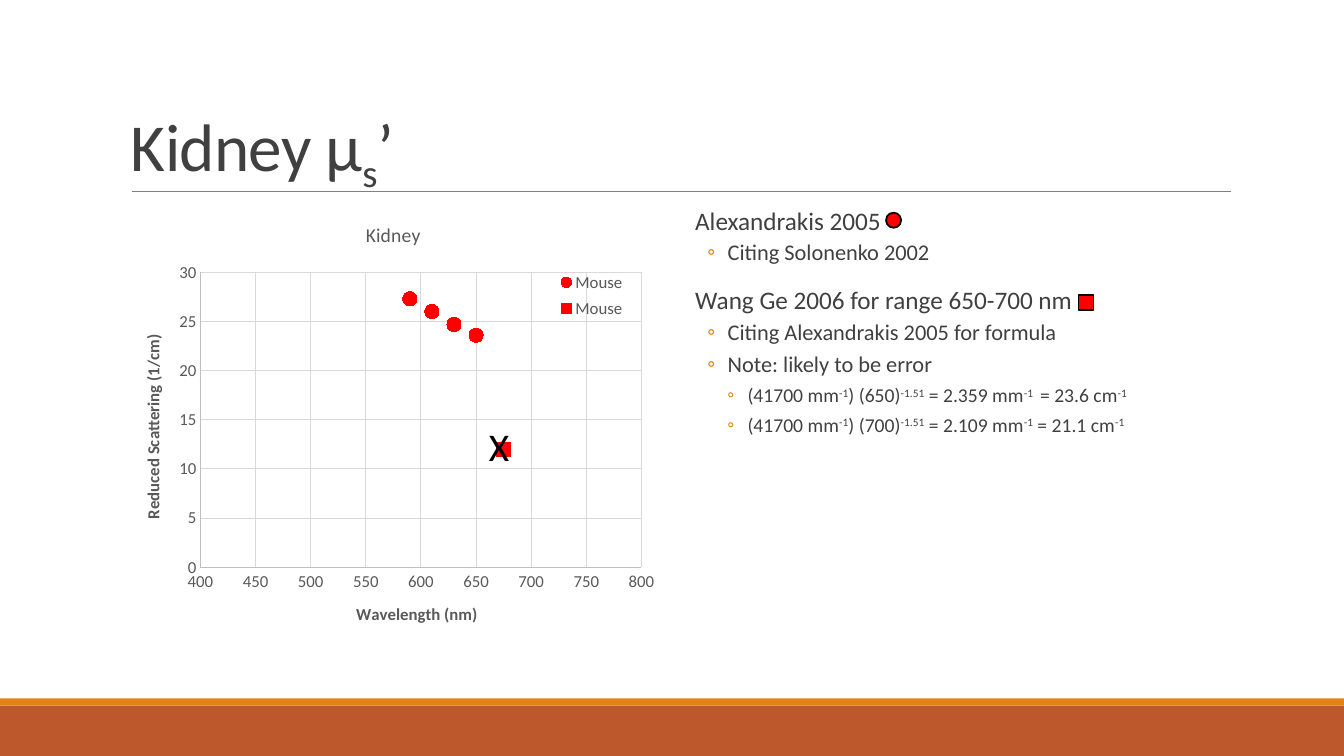
from lxml.etree import SubElement
from pptx import Presentation
from pptx.chart.data import XyChartData
from pptx.dml.color import RGBColor
from pptx.enum.chart import (XL_CHART_TYPE as ChartType, XL_LEGEND_POSITION as LegendPosition,
                             XL_MARKER_STYLE as Marker, XL_TICK_MARK as TickMark)
from pptx.enum.shapes import MSO_CONNECTOR as Connector, MSO_SHAPE as Shape
from pptx.enum.text import MSO_ANCHOR as Anchor
from pptx.oxml import parse_xml
from pptx.oxml.ns import nsdecls, qn
from pptx.util import Cm, Pt

SLIDE_W, SLIDE_H = 33.87, 19.05
LEFT, BODY_TOP, BODY_W, BODY_H = 3.05, 5.13, 13.72, 11.18
# Per outline level: size, left margin (cm), hanging indent (cm), space before, space after
LEVELS = [(18, 0.25, 0, 12, 2), (16, 1.07, 0.51, 2, 4), (14, 1.57, 0.51, 2, 4)]
NOTES = [
    (0, "Alexandrakis 2005"),
    (1, "Citing Solonenko 2002"),
    (0, "Wang Ge 2006 for range 650-700 nm"),
    (1, "Citing Alexandrakis 2005 for formula"),
    (1, "Note: likely to be error"),
    (2, "(41700 mm^-1^) (650)^-1.51^ = 2.359 mm^-1 ^ = 23.6 cm^-1"),
    (2, "(41700 mm^-1^) (700)^-1.51^ = 2.109 mm^-1^ = 21.1 cm^-1"),
]
SERIES = [
    (Marker.CIRCLE, [(590, 27.3), (610, 26), (630, 24.7), (650, 23.6)]),
    (Marker.SQUARE, [(675, 12)]),
]


def rgb(code):
    return RGBColor.from_string(code)


def place(element, x, y, w, h, inner=False):
    """Fix a chart part's position as fractions of the chart."""
    target = '<c:layoutTarget val="inner"/>' if inner else ""
    edges = '<c:xMode val="edge"/><c:yMode val="edge"/>'
    sizes = "".join(f'<c:{tag} val="{v}"/>' for tag, v in zip("xywh", (x, y, w, h)))
    layout = parse_xml(f'<c:layout {nsdecls("c")}><c:manualLayout>{target}{edges}{sizes}'
                       '</c:manualLayout></c:layout>')
    for old in element.findall(qn("c:layout")):
        element.remove(old)
    element.insert(0 if inner else 1, layout)


class KidneySlide:
    font, ink, chart_ink, accent, red = "Calibri", "404040", "595959", "E48312", "FF0000"

    def __init__(self, slide):
        self.shapes = slide.shapes

    def style(self, font, size, color, bold=False):
        font.name, font.size, font.bold = self.font, Pt(size), bold
        font.color.rgb = rgb(color)

    def block(self, shape, x, y, w, h, fill, outline=None):
        box = self.shapes.add_shape(shape, Cm(x), Cm(y), Cm(w), Cm(h))
        box.shadow.inherit = False
        box.fill.solid()
        box.fill.fore_color.rgb = rgb(fill)
        if outline:
            box.line.color.rgb = rgb(outline)
            box.line.width = Pt(1.25)
        else:
            box.line.fill.background()

    def rule(self, x1, x2, y):
        line = self.shapes.add_connector(Connector.STRAIGHT, Cm(x1), Cm(y), Cm(x2), Cm(y))
        line.line.color.rgb = rgb("808080")
        line.line.width = Pt(0.5)
        SubElement(line._element.spPr, qn("a:effectLst"))

    def frame(self, x, y, w, h, wrap=True):
        text_frame = self.shapes.add_textbox(Cm(x), Cm(y), Cm(w), Cm(h)).text_frame
        text_frame.word_wrap = wrap
        return text_frame

    def add_runs(self, paragraph, text, size, color, shift=30):
        """Add text whose parts between ^ marks are shifted off the baseline by a percentage."""
        for i, part in enumerate(text.split("^")):
            if not part:
                continue
            run = paragraph.add_run()
            run.text = part
            self.style(run.font, size, color)
            if i % 2:
                run.font._element.set("baseline", str(shift * 1000))

    def title(self, text):
        text_frame = self.frame(LEFT, 0.79, 27.94, 4.04)
        text_frame.vertical_anchor = Anchor.BOTTOM
        heading = text_frame.paragraphs[0]
        heading.line_spacing = 0.85
        self.add_runs(heading, text, 48, self.ink, shift=-25)
        for run in heading.runs:
            run.font._element.set("spc", "-50")

    def outline(self, x, y, w, h, notes):
        text_frame = self.frame(x, y, w, h)
        text_frame.margin_left = text_frame.margin_right = 0
        for i, (level, text) in enumerate(notes):
            paragraph = text_frame.add_paragraph() if i else text_frame.paragraphs[0]
            size, margin, hang, before, after = LEVELS[level]
            paragraph.level = level
            paragraph.line_spacing = 0.9
            paragraph.space_before, paragraph.space_after = Pt(before), Pt(after)
            props = paragraph._p.get_or_add_pPr()
            props.set("marL", str(Cm(margin)))
            props.set("indent", str(-Cm(hang)))
            if hang:
                color = SubElement(props, qn("a:buClr"))
                SubElement(color, qn("a:srgbClr"), val=self.accent)
                SubElement(props, qn("a:buFont"), typeface=self.font)
                SubElement(props, qn("a:buChar"), char="◦")
            self.add_runs(paragraph, text, size, self.ink)

    def axis(self, axis, title, low, high, step):
        axis.minimum_scale, axis.maximum_scale, axis.major_unit = low, high, step
        axis.major_tick_mark = axis.minor_tick_mark = TickMark.NONE
        axis.has_major_gridlines = True
        for line, color in ((axis.format.line, "BFBFBF"),
                            (axis.major_gridlines.format.line, "D9D9D9")):
            line.color.rgb = rgb(color)
            line.width = Pt(0.75)
        self.style(axis.tick_labels.font, 12, self.chart_ink)
        axis.tick_labels.number_format = "General"
        axis.tick_labels.number_format_is_linked = False
        label = axis.axis_title.text_frame
        label.text = title
        self.style(label.paragraphs[0].runs[0].font, 12, self.chart_ink, bold=True)

    def scatter(self, x, y, w, h, title):
        data = XyChartData()
        for _, points in SERIES:
            series = data.add_series("Mouse")
            for wavelength, scattering in points:
                series.add_data_point(wavelength, scattering)
        chart = self.shapes.add_chart(ChartType.XY_SCATTER, Cm(x), Cm(y), Cm(w), Cm(h), data).chart
        self.style(chart.font, 10, "000000")
        chart.has_title = True
        chart.chart_title.text_frame.text = title
        self.style(chart.chart_title.text_frame.paragraphs[0].runs[0].font, 14, self.chart_ink)
        self.axis(chart.category_axis, "Wavelength (nm)", 400, 800, 50)
        self.axis(chart.value_axis, "Reduced Scattering (1/cm)", 0, 30, 5)
        chart.plots[0].vary_by_categories = False
        for series, (marker, _) in zip(chart.plots[0].series, SERIES):
            series.smooth = False
            series.format.line.fill.background()
            series.marker.style, series.marker.size = marker, 10
            series.marker.format.fill.solid()
            series.marker.format.fill.fore_color.rgb = rgb(self.red)
            series.marker.format.line.color.rgb = rgb(self.red)
        chart.has_legend = True
        chart.legend.position = LegendPosition.CORNER
        chart.legend.include_in_layout = True
        self.style(chart.legend.font, 12, self.chart_ink)
        place(chart._chartSpace.chart.plotArea, 0.146, 0.155, 0.81, 0.665, inner=True)
        place(chart.legend._element, 0.79, 0.14, 0.15, 0.135)


def main():
    deck = Presentation()
    deck.slide_width, deck.slide_height = Cm(SLIDE_W), Cm(SLIDE_H)
    page = KidneySlide(deck.slides.add_slide(deck.slide_layouts[6]))
    page.block(Shape.RECTANGLE, 0, 17.78, SLIDE_W, 1.27, "BD582C")
    page.block(Shape.RECTANGLE, 0, 17.6, SLIDE_W, 0.18, page.accent)
    page.rule(3.33, 31.01, 4.83)
    page.title("Kidney μ^s^’")
    page.outline(17.27, BODY_TOP, BODY_W, BODY_H, NOTES)
    page.block(Shape.OVAL, 22.33, 5.36, 0.38, 0.38, page.red, "000000")
    page.block(Shape.RECTANGLE, 27.18, 7.44, 0.38, 0.38, page.red, "000000")
    page.scatter(LEFT, BODY_TOP, BODY_W, BODY_H, "Kidney")
    cross = page.frame(12.07, 10.52, 1.04, 1.45, wrap=False)
    page.add_runs(cross.paragraphs[0], "X", 28, "000000")
    deck.save("out.pptx")


if __name__ == "__main__":
    main()
